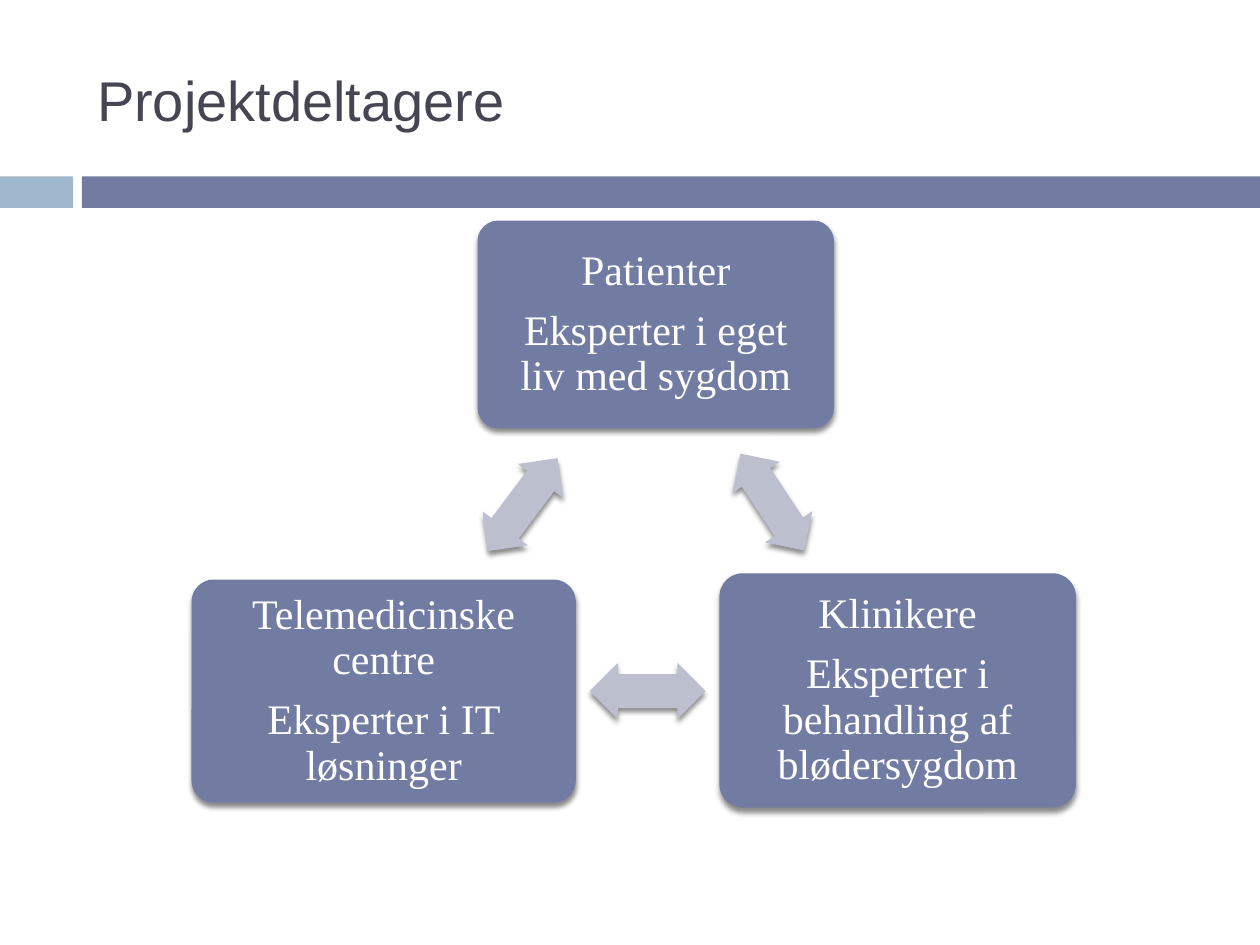
from lxml import etree
from pptx import Presentation
from pptx.dml.color import RGBColor
from pptx.enum.shapes import MSO_SHAPE
from pptx.enum.text import MSO_ANCHOR, PP_ALIGN
from pptx.oxml import parse_xml
from pptx.oxml.ns import nsdecls
from pptx.util import Inches, Pt

LIGHT_BLUE = RGBColor(0x9F, 0xB8, 0xCD)
SLATE = RGBColor(0x72, 0x7C, 0xA3)
PALE_SLATE = RGBColor(0xBC, 0xBF, 0xCE)
DARK = RGBColor(0x46, 0x46, 0x53)
WHITE = RGBColor(0xFF, 0xFF, 0xFF)


def add_filled(kind, left, top, width, height, color):
    shape = page.shapes.add_shape(
        kind, Inches(left), Inches(top), Inches(width), Inches(height))
    shape.fill.solid()
    shape.fill.fore_color.rgb = color
    shape.line.fill.background()
    shape.shadow.inherit = False
    return shape


def add_soft_shadow(shape):
    effects = shape.element.spPr.find(
        "{http://schemas.openxmlformats.org/drawingml/2006/main}effectLst")
    effects.append(parse_xml(
        f'<a:outerShdw {nsdecls("a")} blurRad="{Pt(3)}" dist="{Pt(2.4)}" '
        'dir="5400000" rotWithShape="0"><a:srgbClr val="000000">'
        '<a:alpha val="45000"/></a:srgbClr></a:outerShdw>'))


deck = Presentation()
deck.slide_width, deck.slide_height = Inches(10), Inches(7.5)
page = deck.slides.add_slide(deck.slide_layouts[5])

# Band below the title
add_filled(MSO_SHAPE.RECTANGLE, 0, 1.4, 0.58, 0.25, LIGHT_BLUE)
add_filled(MSO_SHAPE.RECTANGLE, 0.65, 1.4, 9.35, 0.25, SLATE)

title = page.shapes.title
title.left, title.top = Inches(0.67), Inches(0.25)
title.width, title.height = Inches(8.92), Inches(1.08)
title.text_frame.vertical_anchor = MSO_ANCHOR.MIDDLE
para = title.text_frame.paragraphs[0]
para.alignment = PP_ALIGN.LEFT
span = para.add_run()
span.text = "Projektdeltagere"
span.font.size = Pt(32)
span.font.name = "Arial"
span.font.color.rgb = DARK

# Participants: left, top, width, height, paragraphs
participants = [
    (3.79, 1.75, 2.83, 1.65, ["Patienter", "Eksperter i eget liv med sygdom"]),
    (5.71, 4.55, 2.83, 1.86, ["Klinikere", "Eksperter i behandling af blødersygdom"]),
    (1.52, 4.6, 3.05, 1.77, ["Telemedicinske centre", "Eksperter i IT løsninger"]),
]
for left, top, width, height, lines in participants:
    box = add_filled(MSO_SHAPE.ROUNDED_RECTANGLE, left, top, width, height, SLATE)
    box.adjustments[0] = 0.1
    add_soft_shadow(box)
    frame = box.text_frame
    frame.word_wrap = True
    frame.vertical_anchor = MSO_ANCHOR.MIDDLE
    frame.margin_left = frame.margin_right = Inches(0.15)
    frame.margin_top = frame.margin_bottom = Inches(0.15)
    for index, line in enumerate(lines):
        para = frame.add_paragraph() if index else frame.paragraphs[0]
        para.alignment = PP_ALIGN.CENTER
        para.line_spacing = 0.9
        para.space_after = Pt(8.4)
        span = para.add_run()
        span.text = line
        span.font.size = Pt(24)
        span.font.name = "Times New Roman"
        span.font.color.rgb = WHITE

# Arrows between the participants: left, top, rotation
for left, top, rotation in [(5.67, 3.76, 56.6), (4.68, 5.26, 180), (3.69, 3.78, 306.8)]:
    arrow = add_filled(MSO_SHAPE.LEFT_RIGHT_ARROW, left, top, 0.92, 0.45, PALE_SLATE)
    arrow.adjustments[0], arrow.adjustments[1] = 0.6, 0.5
    arrow.rotation = rotation
    add_soft_shadow(arrow)

deck.save("out.pptx")
